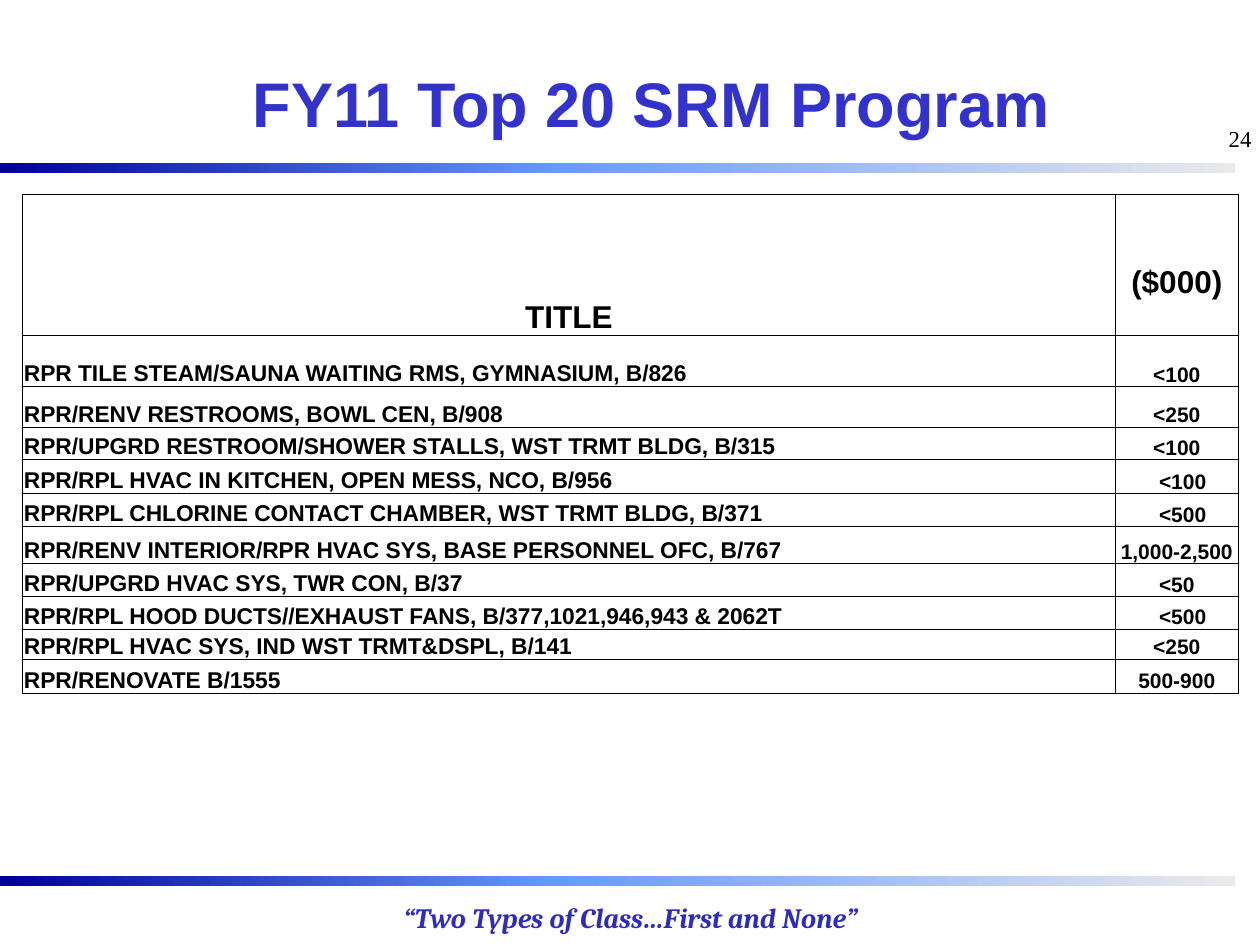
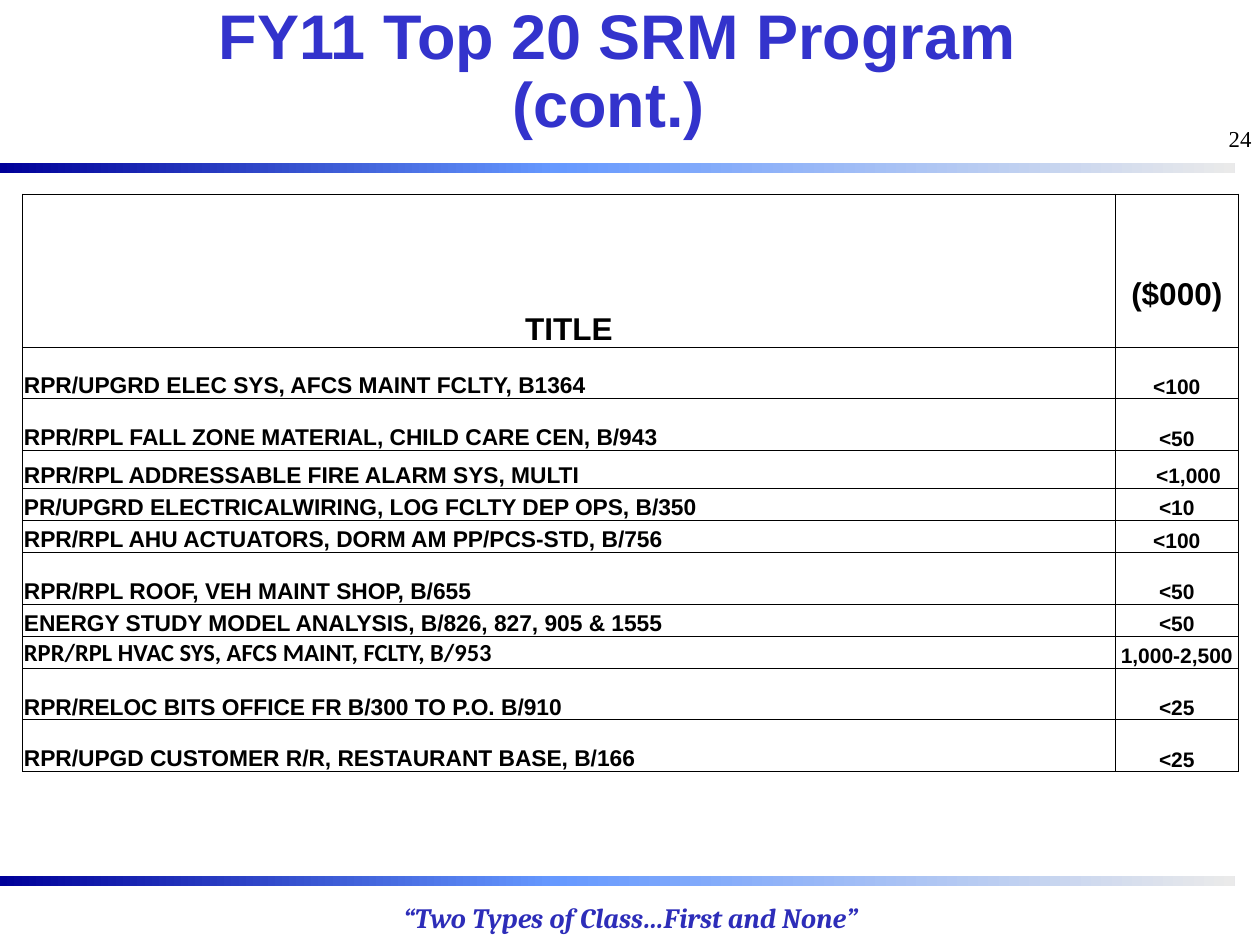
from dataclasses import dataclass
from typing import NamedTuple

from lxml.etree import SubElement
from pptx import Presentation
from pptx.dml.color import RGBColor
from pptx.enum.shapes import MSO_SHAPE as Shape
from pptx.enum.text import MSO_ANCHOR as Anchor, PP_ALIGN as Align
from pptx.oxml.ns import qn
from pptx.util import Emu, Inches, Pt

# The slide is a grid of 100 columns and 75 rows, with square cells.
COLUMNS, ROWS = 100, 75
CELL = Inches(0.1)

COLORS = {
    "title": "3333CC",
    "motto": "2D2DB9",
    "text": "000000",
    "paper": "FFFFFF",
    "band_dark": "000099",
    "band_middle": "6699FF",
    "band_light": "EAEAEA",
}


class Box(NamedTuple):
    """A place on the grid."""
    left: float
    top: float
    width: float
    height: float

    def lengths(self) -> list[Emu]:
        return [grid(value) for value in self]


class Type(NamedTuple):
    size: float
    color: str = "text"
    name: str = "Arial"
    bold: bool = True
    italic: bool = False


class Project(NamedTuple):
    title: str
    cost: str
    height: float
    cost_shift: float = 0
    type: Type = Type(13)


@dataclass
class ProgramSlide:
    title: str
    title_width: float
    header_height: float
    projects: list[Project]


TITLE_TYPE = Type(36, "title")
HEADER_TYPE = Type(18)
COST_TYPE = Type(12)
MOTTO_TYPE = Type(16, "motto", "Cambria", italic=True)
NUMBER_TYPE = Type(13, name="Times New Roman", bold=False)

BAND_TOPS = (12.9, 69.5)
BAND_HEIGHT = 0.8
BAND_SPLIT, BAND_END = 44.2, 98
TABLE_LEFT, TABLE_TOP = 1.8, 15.4
TABLE_COLUMNS = (86.7, 9.8)
WHITE_ROWS = {2, 3, 10}
TEXT_INSET = 1
CELL_INSET = 0.1
HEADER_COST_LIFT = 2.8
TITLE_INDENT = 1.4
SHIFT = 0.93

PROGRAM = [
    ProgramSlide("FY11 Top 20 SRM Program", 87, 11.2, [
        Project("RPR TILE STEAM/SAUNA WAITING RMS, GYMNASIUM, B/826", "<100", 4.1),
        Project("RPR/RENV RESTROOMS, BOWL CEN, B/908", "<250", 3.2),
        Project("RPR/UPGRD RESTROOM/SHOWER STALLS, WST TRMT BLDG, B/315", "<100", 2.6),
        Project("RPR/RPL HVAC IN KITCHEN, OPEN MESS, NCO, B/956", "<100", 2.7, SHIFT),
        Project("RPR/RPL CHLORINE CONTACT CHAMBER, WST TRMT BLDG, B/371", "<500", 2.6, SHIFT),
        Project("RPR/RENV INTERIOR/RPR HVAC SYS, BASE PERSONNEL OFC, B/767", "1,000-2,500", 2.95),
        Project("RPR/UPGRD HVAC SYS, TWR CON, B/37", "<50", 2.6),
        Project("RPR/RPL HOOD DUCTS//EXHAUST FANS, B/377,1021,946,943 & 2062T", "<500", 2.6, SHIFT),
        Project("RPR/RPL HVAC SYS, IND WST TRMT&DSPL, B/141", "<250", 2.4),
        Project("RPR/RENOVATE B/1555", "500-900", 2.7),
    ]),
    ProgramSlide("FY11 Top 20 SRM Program (cont.)", 81.6, 12.15, [
        Project("RPR/UPGRD ELEC SYS, AFCS MAINT FCLTY, B1364", "<100", 4.1),
        Project("RPR/RPL FALL ZONE MATERIAL, CHILD CARE CEN, B/943", "<50", 4.1),
        Project("RPR/RPL ADDRESSABLE FIRE ALARM SYS, MULTI", "<1,000", 3, 2 * SHIFT),
        Project("PR/UPGRD ELECTRICALWIRING, LOG FCLTY DEP OPS, B/350", "<10", 2.55),
        Project("RPR/RPL AHU ACTUATORS, DORM AM PP/PCS-STD, B/756", "<100", 2.55),
        Project("RPR/RPL ROOF, VEH MAINT SHOP, B/655", "<50", 4.1),
        Project("ENERGY STUDY MODEL ANALYSIS, B/826, 827, 905 & 1555", "<50", 2.55),
        Project("RPR/RPL HVAC SYS, AFCS MAINT, FCLTY, B/953", "1,000-2,500", 2.55,
                type=Type(14, name="Calibri")),
        Project("RPR/RELOC BITS OFFICE FR B/300 TO P.O. B/910", "<25", 4.1),
        Project("RPR/UPGD CUSTOMER R/R, RESTAURANT BASE, B/166", "<25", 4.1),
    ]),
]


def grid(cells: float) -> Emu:
    return Emu(round(cells * CELL))


def color(name: str) -> RGBColor:
    return RGBColor.from_string(COLORS[name])


def write(frame, text: str, type_: Type, align: Align):
    frame.text = text
    paragraph = frame.paragraphs[0]
    paragraph.alignment = align
    font = paragraph.font
    font.name, font.size = type_.name, Pt(type_.size)
    font.bold, font.italic = type_.bold, type_.italic
    font.color.rgb = color(type_.color)
    return paragraph


def add_text(slide, box: Box, text: str, type_: Type, align: Align = Align.CENTER,
             anchor: Anchor = Anchor.TOP, left_inset: float = TEXT_INSET):
    frame = slide.shapes.add_textbox(*box.lengths()).text_frame
    frame.word_wrap = True
    frame.vertical_anchor = anchor
    frame.margin_left = grid(left_inset)
    return write(frame, text, type_, align)


def add_band(slide, top: float) -> None:
    """Draw a bar that fades from dark to middle to light."""
    halves = (
        (0, BAND_SPLIT, "band_dark", "band_middle"),
        (BAND_SPLIT, BAND_END, "band_middle", "band_light"),
    )
    for left, right, start, end in halves:
        box = Box(left, top, right - left, BAND_HEIGHT)
        shape = slide.shapes.add_shape(Shape.RECTANGLE, *box.lengths())
        shape.shadow.inherit = False
        shape.line.fill.background()
        shape.fill.gradient()
        shape.fill.gradient_angle = 0
        for stop, name in zip(shape.fill.gradient_stops, (start, end)):
            stop.color.rgb = color(name)


def add_borders(cell) -> None:
    properties = cell._tc.get_or_add_tcPr()
    for side in ("lnL", "lnR", "lnT", "lnB"):
        line = SubElement(properties, qn(f"a:{side}"), w=str(Pt(0.5)))
        fill = SubElement(line, qn("a:solidFill"))
        SubElement(fill, qn("a:srgbClr"), val=COLORS["text"])


def fill_cell(cell, text: str, type_: Type, align: Align, white: bool = False,
              shift: float = 0, lift: float = 0) -> None:
    """Write a cell; shift and lift push its text right and up."""
    add_borders(cell)
    if white:
        cell.fill.solid()
        cell.fill.fore_color.rgb = color("paper")
    else:
        cell.fill.background()
    cell.vertical_anchor = Anchor.BOTTOM
    cell.margin_left = grid(CELL_INSET + shift)
    cell.margin_right = cell.margin_top = grid(CELL_INSET)
    cell.margin_bottom = grid(lift)
    write(cell.text_frame, text, type_, align)


def add_project_table(slide, content: ProgramSlide) -> None:
    heights = [content.header_height] + [project.height for project in content.projects]
    box = Box(TABLE_LEFT, TABLE_TOP, sum(TABLE_COLUMNS), sum(heights))
    table = slide.shapes.add_table(len(heights), len(TABLE_COLUMNS), *box.lengths()).table
    table.first_row = table.horz_banding = False
    for column, width in zip(table.columns, TABLE_COLUMNS):
        column.width = grid(width)
    for row, height in zip(table.rows, heights):
        row.height = grid(height)

    fill_cell(table.cell(0, 0), "TITLE", HEADER_TYPE, Align.CENTER)
    fill_cell(table.cell(0, 1), "($000)", HEADER_TYPE, Align.CENTER, lift=HEADER_COST_LIFT)
    for index, project in enumerate(content.projects, start=1):
        fill_cell(table.cell(index, 0), project.title, project.type, Align.LEFT,
                  white=index in WHITE_ROWS)
        fill_cell(table.cell(index, 1), project.cost, COST_TYPE, Align.CENTER,
                  shift=project.cost_shift)


def add_frame(slide) -> None:
    """Add the motto, the bands and the number that all slides share."""
    add_text(slide, Box(14.2, 71, 71.7, 3.7), "“Two Types of Class…First and None”", MOTTO_TYPE)
    for top in BAND_TOPS:
        add_band(slide, top)
    add_text(slide, Box(96.6, 9.4, 3.7, 3.2), "24", NUMBER_TYPE, Align.RIGHT, left_inset=0)


def add_program_slide(presentation, content: ProgramSlide) -> None:
    slide = presentation.slides.add_slide(presentation.slide_layouts[6])
    add_frame(slide)
    title = add_text(slide, Box(7.5, 0, content.title_width, 11.7), content.title,
                     TITLE_TYPE, anchor=Anchor.BOTTOM)
    title.line_spacing = 0.9
    title._p.get_or_add_pPr().set("indent", str(grid(TITLE_INDENT)))
    add_project_table(slide, content)


def main() -> None:
    presentation = Presentation()
    presentation.slide_width = grid(COLUMNS)
    presentation.slide_height = grid(ROWS)
    for content in PROGRAM:
        add_program_slide(presentation, content)
    presentation.save("out.pptx")


if __name__ == "__main__":
    main()
